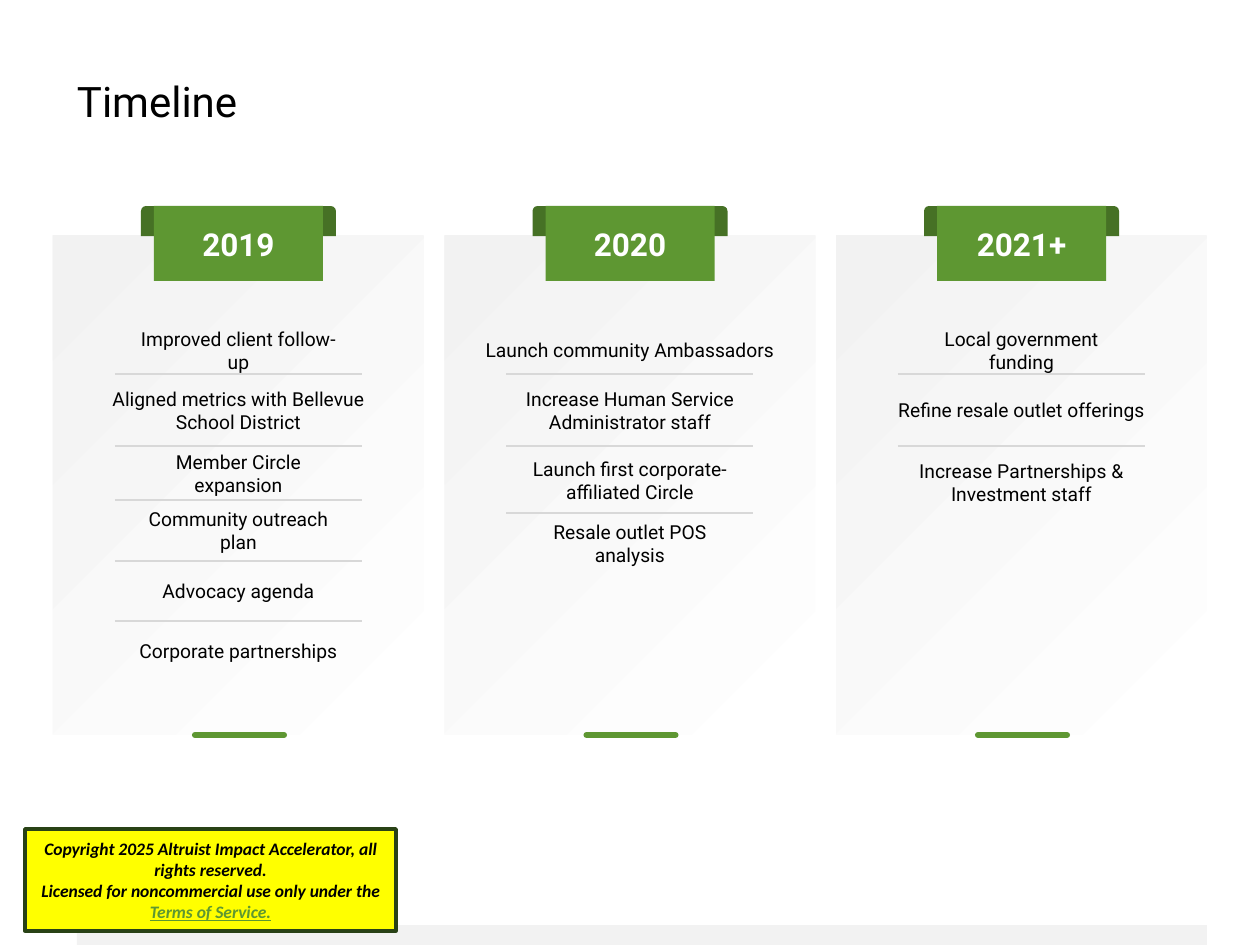
from lxml import etree
from pptx import Presentation
from pptx.dml.color import RGBColor
from pptx.enum.shapes import MSO_CONNECTOR, MSO_SHAPE
from pptx.enum.text import MSO_ANCHOR, PP_ALIGN
from pptx.oxml.ns import qn
from pptx.util import Emu, Pt

RECTANGLE = MSO_SHAPE.RECTANGLE
ROUND_TOP = MSO_SHAPE.ROUND_2_SAME_RECTANGLE
STRAIGHT = MSO_CONNECTOR.STRAIGHT
MIDDLE = MSO_ANCHOR.MIDDLE
LEFT, CENTER = PP_ALIGN.LEFT, PP_ALIGN.CENTER

EMU_PER_PX = 914400 / 126
GREEN, DARK_GREEN, OUTLINE_GREEN = "5E9732", "467125", "294216"
PALE_GRAY, RULE_GRAY = "F2F2F2", "D8D8D8"
BLACK, WHITE, YELLOW = "000000", "FFFFFF", "FFFF00"

NARROW, MEDIUM, WIDE = 212, 257, 304
ONE_LINE, TWO_LINES = 24, 47
CARD_WIDTH = 371

YEARS = [
    ("2019", [
        ("Improved client follow-up", 350, NARROW, ONE_LINE),
        ("Aligned metrics with Bellevue School District", 410, MEDIUM, TWO_LINES),
        ("Member Circle expansion", 473, NARROW, ONE_LINE),
        ("Community outreach plan", 530, NARROW, ONE_LINE),
        ("Advocacy agenda", 591, NARROW, ONE_LINE),
        ("Corporate partnerships", 651, NARROW, ONE_LINE),
    ], [374, 446, 500, 561, 621]),
    ("2020", [
        ("Launch community Ambassadors", 350, WIDE, ONE_LINE),
        ("Increase Human Service Administrator staff", 410, MEDIUM, TWO_LINES),
        ("Launch first corporate-affiliated Circle", 480, NARROW, TWO_LINES),
        ("Resale outlet POS analysis", 543, NARROW, ONE_LINE),
    ], [374, 446, 513]),
    ("2021+", [
        ("Local government funding", 350, NARROW, ONE_LINE),
        ("Refine resale outlet offerings", 410, MEDIUM, ONE_LINE),
        ("Increase Partnerships & Investment staff", 482, NARROW, TWO_LINES),
    ], [374, 446]),
]


def px(length):
    """Convert pixels to EMU."""
    return Emu(round(length * EMU_PER_PX))


def color(hex_string):
    """Return the colour for a hex string."""
    return RGBColor.from_string(hex_string)


def add_block(slide, kind, left, top, width, height, fill):
    """Add a flat preset shape without outline or shadow."""
    shape = slide.shapes.add_shape(kind, px(left), px(top), px(width), px(height))
    shape.shadow.inherit = False
    shape.fill.solid()
    shape.fill.fore_color.rgb = color(fill)
    shape.line.fill.background()
    return shape


def add_rule(slide, left, top, width, stroke, points):
    """Add a horizontal line without shadow."""
    rule = slide.shapes.add_connector(STRAIGHT, px(left), px(top), px(left + width), px(top))
    rule.line.color.rgb = color(stroke)
    rule.line.width = Pt(points)
    etree.SubElement(rule._element.spPr, qn("a:effectLst"))
    return rule


def style_paragraph(paragraph, size, fill=BLACK, bold=False, font="Roboto", align=CENTER):
    """Format every run of a paragraph."""
    paragraph.alignment = align
    for run in paragraph.runs:
        run.font.name = font
        run.font.size = Pt(size)
        run.font.bold = bold
        run.font.color.rgb = color(fill)


def clear_margins(text_frame):
    """Remove the insets, wrap the text and centre it vertically."""
    text_frame.margin_left = text_frame.margin_right = 0
    text_frame.margin_top = text_frame.margin_bottom = 0
    text_frame.word_wrap = True
    text_frame.vertical_anchor = MIDDLE


def add_title(slide, left, top, width, height):
    """Place and format the title placeholder."""
    title = slide.shapes.title
    title.left, title.top, title.width, title.height = map(px, (left, top, width, height))
    title.text_frame.text = "Timeline"
    clear_margins(title.text_frame)
    paragraph = title.text_frame.paragraphs[0]
    paragraph.line_spacing = 0.9
    style_paragraph(paragraph, 24, align=LEFT)


def add_card(slide, left, top, width, height):
    """Add the shaded card with its ribbon backing and foot line."""
    card = add_block(slide, RECTANGLE, left, top, width, height, WHITE)
    card.fill.gradient()
    card.fill.gradient_angle = 135
    for stop, position, shade in zip(card.fill.gradient_stops, (0, 1), (WHITE, PALE_GRAY)):
        stop.position = position
        stop.color.rgb = color(shade)
    ribbon = add_block(slide, ROUND_TOP, left + 88, top - 30, 195, 30, DARK_GREEN)
    ribbon.adjustments[0] = 0.17
    foot = add_rule(slide, left + 142, top + height, 89, GREEN, 3.5)
    foot.line._get_or_add_ln().set("cap", "rnd")


def add_year(slide, left, top, width, height, year, items, rules):
    """Add one year column with its tab, items and dividers."""
    add_card(slide, left, top, width, height)
    tab = add_block(slide, ROUND_TOP, left + 101, top - 30, 169, 75, GREEN)
    tab.adjustments[0] = 0
    tab.text_frame.text = year
    tab.text_frame.vertical_anchor = MIDDLE
    style_paragraph(tab.text_frame.paragraphs[0], 18, WHITE, True)
    for text, middle, text_width, text_height in items:
        text_left = left + (width - text_width) / 2
        box = slide.shapes.add_textbox(
            px(text_left), px(middle - text_height / 2), px(text_width), px(text_height))
        box.text_frame.text = text
        clear_margins(box.text_frame)
        style_paragraph(box.text_frame.paragraphs[0], 11)
    for rule_top in rules:
        add_rule(slide, left + 62, rule_top, 247, RULE_GRAY, 0.75)


def add_timeline(slide, left, top, width, height):
    """Spread the year columns evenly over the given box."""
    pitch = (width - CARD_WIDTH) / (len(YEARS) - 1)
    for index, (year, items, rules) in enumerate(YEARS):
        add_year(slide, left + index * pitch, top, CARD_WIDTH, height, year, items, rules)


def add_copyright(slide, left, top, width, height):
    """Add the yellow licence notice."""
    notice = add_block(slide, RECTANGLE, left, top, width, height, YELLOW)
    notice.line.color.rgb = color(OUTLINE_GREEN)
    notice.line.width = Pt(2)
    text_frame = notice.text_frame
    text_frame.vertical_anchor = MIDDLE
    text_frame.text = "Copyright 2025 Altruist Impact Accelerator, all rights reserved."
    license_line = text_frame.add_paragraph()
    license_line.text = "Licensed for noncommercial use only under the "
    terms = license_line.add_run()
    terms.text = "Terms of Service."
    for paragraph in text_frame.paragraphs:
        style_paragraph(paragraph, 10, bold=True, font="Calibri")
        for run in paragraph.runs:
            run.font.italic = True
    terms.font.color.rgb = color(GREEN)
    terms.font.underline = True


def main():
    """Build and save the timeline slide."""
    presentation = Presentation()
    presentation.slide_width, presentation.slide_height = px(1260), px(945)
    slide = presentation.slides.add_slide(presentation.slide_layouts[5])
    add_block(slide, RECTANGLE, 77, 925, 1130, 20, PALE_GRAY)
    add_title(slide, 77, 81, 916, 45)
    add_timeline(slide, 53, 236, 1154, 499)
    add_copyright(slide, 25, 829, 371, 102)
    presentation.save("out.pptx")


if __name__ == "__main__":
    main()
